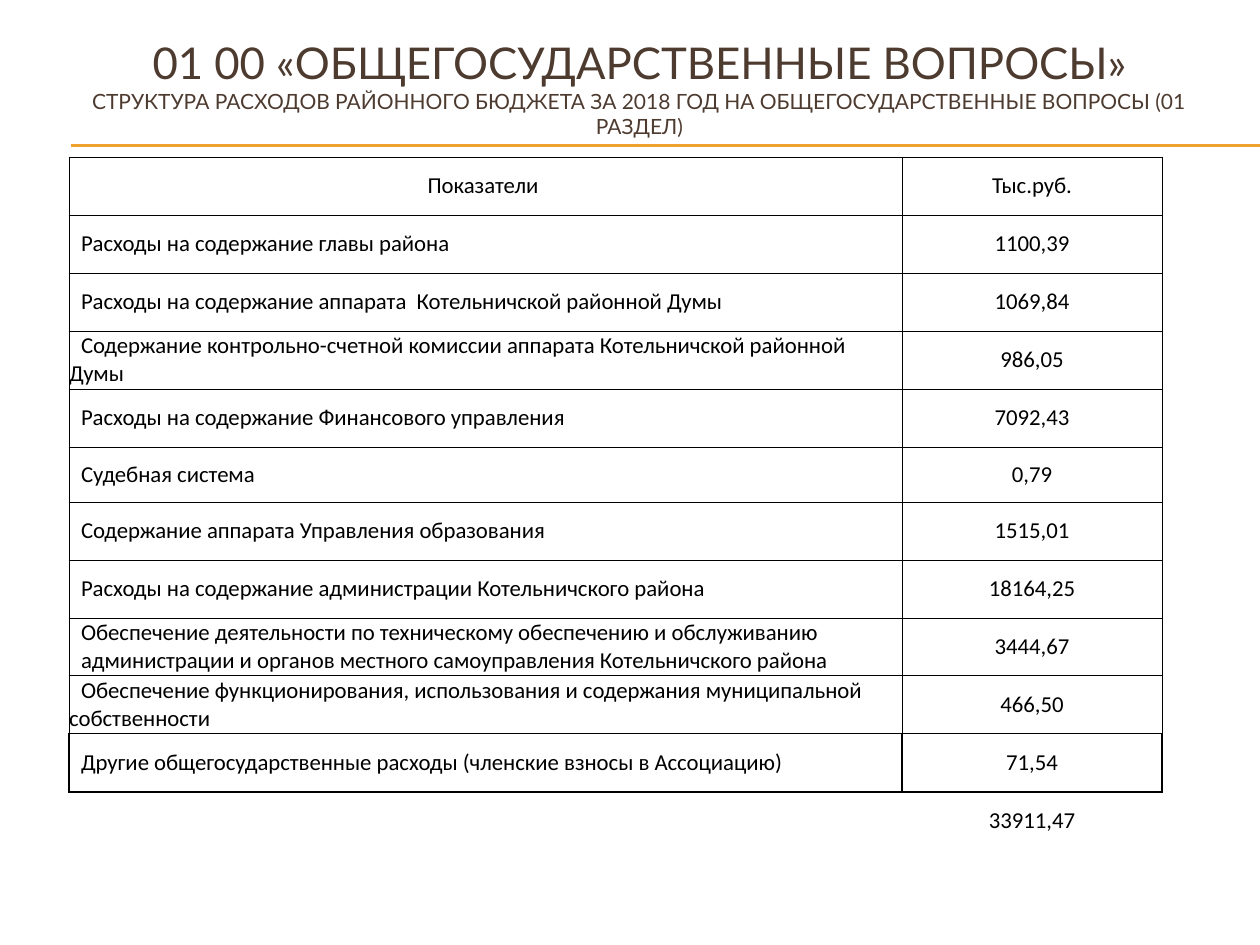
from dataclasses import dataclass

import pptx
import pptx.dml.color
import pptx.enum.shapes
import pptx.enum.text
import pptx.oxml
import pptx.oxml.ns
import pptx.util

RGBColor = pptx.dml.color.RGBColor
Align = pptx.enum.text.PP_ALIGN
Anchor = pptx.enum.text.MSO_ANCHOR

BLACK = RGBColor(0x00, 0x00, 0x00)
BROWN = RGBColor(0x4E, 0x3B, 0x30)
ORANGE = RGBColor(0xF0, 0xA2, 0x2E)
PIXELS_PER_INCH = 126
THIN, THICK = 0.5, 1
ROW_HEIGHT, SHORT_ROW_HEIGHT = 58, 55
INDENT = 12


@dataclass
class Expense:
    name: str
    amount: str
    hanging: bool = False
    height: int = ROW_HEIGHT


EXPENSES = [
    Expense("Расходы на содержание главы района", "1100,39"),
    Expense("Расходы на содержание аппарата  Котельничской районной Думы", "1069,84"),
    Expense("Содержание контрольно-счетной комиссии аппарата Котельничской районной Думы", "986,05"),
    Expense("Расходы на содержание Финансового управления", "7092,43"),
    Expense("Судебная система", "0,79", height=SHORT_ROW_HEIGHT),
    Expense("Содержание аппарата Управления образования", "1515,01"),
    Expense("Расходы на содержание администрации Котельничского района", "18164,25"),
    Expense(
        "Обеспечение деятельности по техническому обеспечению и обслуживанию "
        "администрации и органов местного самоуправления Котельничского района",
        "3444,67",
        hanging=True,
    ),
    Expense("Обеспечение функционирования, использования и содержания муниципальной собственности", "466,50"),
    Expense("Другие общегосударственные расходы (членские взносы в Ассоциацию)", "71,54"),
]
HEADER = Expense("Показатели ", "Тыс.руб.")
TOTAL = Expense("", "33911,47")


def px(length: int) -> pptx.util.Emu:
    return pptx.util.Emu(round(length * 914400 / PIXELS_PER_INCH))


def add_rule(slide, top: int) -> None:
    rule = slide.shapes.add_connector(
        pptx.enum.shapes.MSO_CONNECTOR.STRAIGHT, px(71), px(top), px(1260), px(top)
    )
    rule.line.color.rgb = ORANGE
    rule.line.width = pptx.util.Pt(0.75)
    rule._element.spPr.append(pptx.oxml.parse_xml(f"<a:effectLst {pptx.oxml.ns.nsdecls('a')}/>"))


def fill_title(title) -> None:
    title.left, title.top, title.width, title.height = px(41), px(29), px(1197), px(116)
    frame = title.text_frame
    frame.word_wrap = True
    frame.auto_size = pptx.enum.text.MSO_AUTO_SIZE.NONE
    frame.vertical_anchor = Anchor.MIDDLE
    paragraph = frame.paragraphs[0]
    paragraph.alignment = Align.CENTER
    paragraph.font.name = "Lato"
    paragraph.font.color.rgb = BROWN
    heading = paragraph.add_run()
    heading.text = "01 00 «ОБЩЕГОСУДАРСТВЕННЫЕ ВОПРОСЫ»"
    heading.font.size = pptx.util.Pt(25)
    paragraph.add_line_break()
    subtitle = paragraph.add_run()
    subtitle.text = (
        "СТРУКТУРА РАСХОДОВ РАЙОННОГО БЮДЖЕТА ЗА 2018 ГОД "
        "НА ОБЩЕГОСУДАРСТВЕННЫЕ ВОПРОСЫ (01 РАЗДЕЛ)"
    )
    subtitle.font.size = pptx.util.Pt(12)


def set_borders(cell, left: float, right: float, top: float, bottom: float) -> None:
    properties = cell._tc.get_or_add_tcPr()
    for side, width in zip("LRTB", (left, right, top, bottom)):
        paint = f'<a:solidFill><a:srgbClr val="{BLACK}"/></a:solidFill>' if width else "<a:noFill/>"
        properties.append(pptx.oxml.parse_xml(
            f"<a:ln{side} {pptx.oxml.ns.nsdecls('a')} w=\"{int(width * 12700)}\">{paint}</a:ln{side}>"
        ))


def fill_cell(cell, text: str, alignment: Align) -> None:
    cell.fill.background()
    cell.margin_left = cell.margin_right = cell.margin_top = cell.margin_bottom = 0
    cell.vertical_anchor = Anchor.MIDDLE
    paragraph = cell.text_frame.paragraphs[0]
    paragraph.text = text
    paragraph.alignment = alignment
    paragraph.font.name = "Calibri"
    paragraph.font.size = pptx.util.Pt(13)
    paragraph.font.color.rgb = BLACK


def add_expense_table(slide) -> None:
    records = [HEADER, *EXPENSES, TOTAL]
    column_widths = (833, 260)
    table = slide.shapes.add_table(
        len(records), 2, px(69), px(157), px(sum(column_widths)),
        px(sum(record.height for record in records)),
    ).table
    table.first_row = table.horz_banding = False
    for column, width in zip(table.columns, column_widths):
        column.width = px(width)
    for row, record in zip(table.rows, records):
        row.height = px(record.height)
        name_cell, amount_cell = row.cells
        for cell in row.cells:
            if record is TOTAL:
                set_borders(cell, 0, 0, THICK, 0)
            elif record is EXPENSES[-1]:
                set_borders(cell, THICK, THICK, THIN, THICK)
            else:
                set_borders(cell, THIN, THIN, THIN, THIN)
        fill_cell(name_cell, record.name, Align.CENTER if record is HEADER else Align.LEFT)
        fill_cell(amount_cell, record.amount, Align.CENTER)
        if record in EXPENSES:
            paragraph_properties = name_cell.text_frame.paragraphs[0]._p.get_or_add_pPr()
            paragraph_properties.set("marL", str(px(INDENT if record.hanging else 0)))
            paragraph_properties.set("indent", str(px(0 if record.hanging else INDENT)))


def main() -> None:
    presentation = pptx.Presentation()
    presentation.slide_width, presentation.slide_height = px(1260), px(945)
    slide = presentation.slides.add_slide(presentation.slide_layouts[5])
    for top in (145, 146):
        add_rule(slide, top)
    fill_title(slide.shapes.title)
    add_expense_table(slide)
    presentation.save("out.pptx")


if __name__ == "__main__":
    main()
